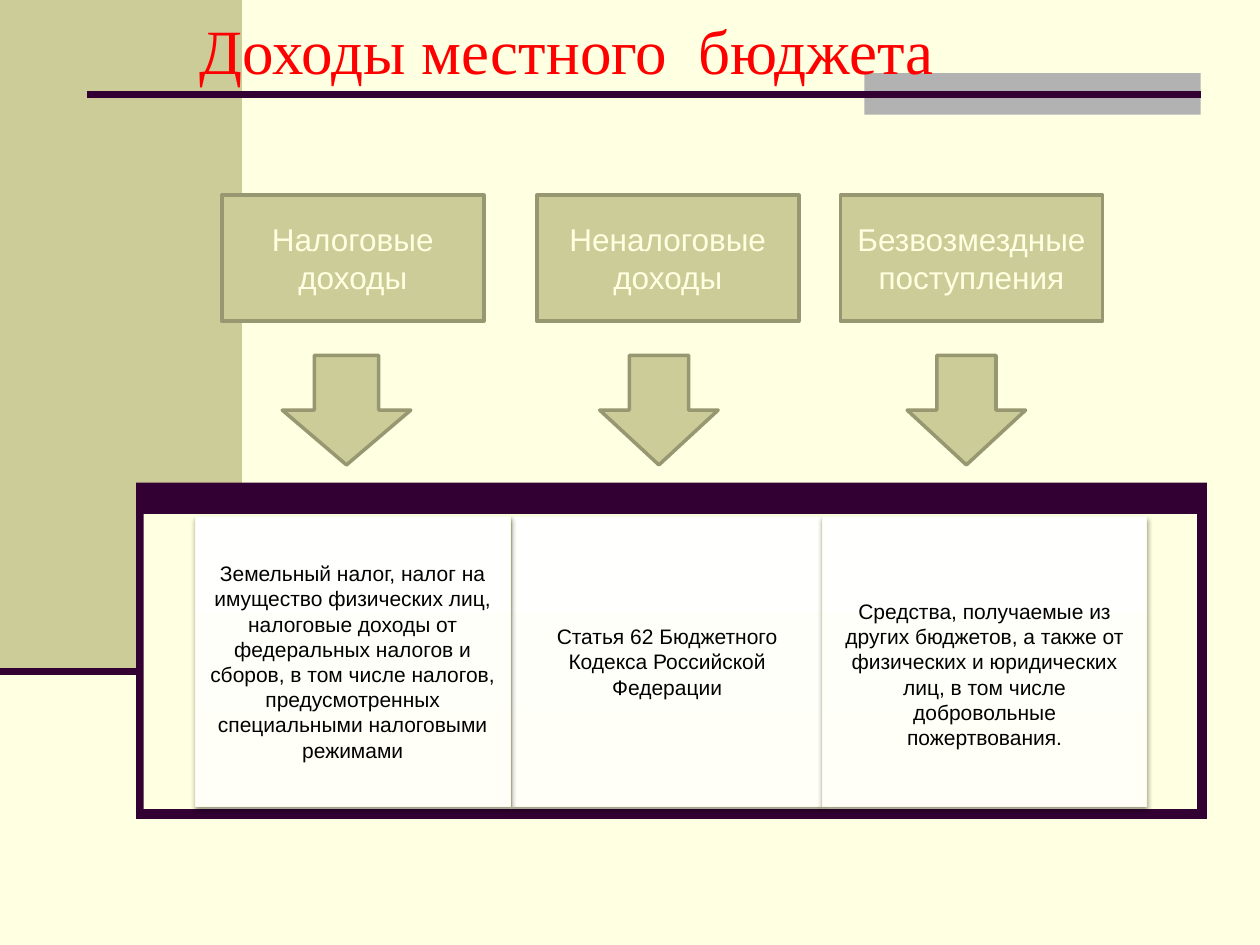
from lxml import etree
from pptx import Presentation
from pptx.dml.color import RGBColor
from pptx.enum import shapes, text
from pptx.oxml import parse_xml
from pptx.oxml.ns import nsdecls, qn
from pptx.util import Inches, Pt

CREAM = RGBColor(0xFF, 0xFF, 0xE1)
KHAKI = RGBColor(0xCC, 0xCC, 0x99)
OLIVE = RGBColor(0x97, 0x97, 0x71)
PLUM = RGBColor(0x33, 0x00, 0x33)
GRAY = RGBColor(0xB2, 0xB2, 0xB2)
RED = RGBColor(0xFF, 0x00, 0x00)
BLACK = RGBColor(0x00, 0x00, 0x00)
CARD_BOTTOM = RGBColor(0xFF, 0xFF, 0xF7)
CARD_TOP = RGBColor(0xFF, 0xFF, 0xFD)
CARD_EDGE = RGBColor(0xFA, 0xFA, 0xE8)

RECTANGLE = shapes.MSO_SHAPE.RECTANGLE
DOWN_ARROW = shapes.MSO_SHAPE.DOWN_ARROW

# Heading, its left edge, arrow left edge and width
CATEGORIES = [
    ("Налоговые доходы", 1.76, 2.24, 1.02),
    ("Неналоговые доходы", 4.26, 4.76, 0.94),
    ("Безвозмездные поступления", 6.67, 7.2, 0.94),
]
# Description, left edge, width, top inset; from back to front
CARDS = [
    ("Статья 62 Бюджетного Кодекса Российской Федерации", 4.07, 2.45, 0.05),
    ("Средства, получаемые из других бюджетов, а также от физических и "
     "юридических лиц, в том числе добровольные пожертвования.", 6.53, 2.57, 0.25),
    ("Земельный налог, налог на имущество физических лиц, налоговые доходы "
     "от федеральных налогов и сборов, в том числе налогов, предусмотренных "
     "специальными налоговыми режимами", 1.55, 2.5, 0.05),
]


def write(shape, words, size, color, font_name="Arial"):
    frame = shape.text_frame
    frame.word_wrap = True
    frame.vertical_anchor = text.MSO_ANCHOR.MIDDLE
    paragraph = frame.paragraphs[0]
    paragraph.text = words
    paragraph.alignment = text.PP_ALIGN.CENTER
    paragraph.font.name = font_name
    paragraph.font.size = Pt(size)
    paragraph.font.color.rgb = color


def add_block(slide, kind, left, top, width, height, fill, edge=None):
    """Add a solid preset shape, outlined only if an edge colour is given."""
    shape = slide.shapes.add_shape(
        kind, Inches(left), Inches(top), Inches(width), Inches(height))
    shape.shadow.inherit = False
    shape.fill.solid()
    shape.fill.fore_color.rgb = fill
    if edge is None:
        shape.line.fill.background()
    else:
        shape.line.color.rgb = edge
        shape.line.width = Pt(2)
    return shape


def add_rule(slide, left, right, y, weight):
    rule = slide.shapes.add_connector(
        shapes.MSO_CONNECTOR.STRAIGHT,
        Inches(left), Inches(y), Inches(right), Inches(y))
    rule.line.color.rgb = PLUM
    rule.line.width = Pt(weight)
    etree.SubElement(rule._element.spPr, qn("a:effectLst"))


def add_card(slide, words, left, width, top_inset):
    """Add a softly shaded and shadowed description card."""
    card = add_block(slide, RECTANGLE, left, 4.1, width, 2.3, CARD_TOP, CARD_EDGE)
    card.line.width = Pt(0.75)
    card.fill.gradient()
    card.fill.gradient_angle = 90
    for stop, color in zip(card.fill.gradient_stops, (CARD_BOTTOM, CARD_TOP)):
        stop.color.rgb = color
    card._element.spPr.find(qn("a:effectLst")).append(parse_xml(
        f'<a:outerShdw {nsdecls("a")} blurRad="40000" dist="20000" '
        'dir="5400000" rotWithShape="0"><a:srgbClr val="000000">'
        '<a:alpha val="38000"/></a:srgbClr></a:outerShdw>'))
    card.text_frame.margin_top = Inches(top_inset)
    write(card, words, 12, BLACK)


def add_backdrop(slide):
    slide.background.fill.solid()
    slide.background.fill.fore_color.rgb = CREAM
    add_block(slide, RECTANGLE, 0, 0, 1.92, 5.33, KHAKI)
    add_block(slide, RECTANGLE, 1.08, 3.83, 8.5, 2.67, PLUM)
    add_block(slide, RECTANGLE, 1.14, 4.08, 8.36, 2.34, CREAM)
    add_rule(slide, 0, 1.08, 5.33, 4)
    add_block(slide, RECTANGLE, 6.86, 0.58, 2.67, 0.33, GRAY)
    add_rule(slide, 0.69, 9.53, 0.75, 3.5)


def main():
    presentation = Presentation()
    presentation.slide_width = Inches(10)
    presentation.slide_height = Inches(7.5)
    slide = presentation.slides.add_slide(presentation.slide_layouts[6])

    add_backdrop(slide)
    title = slide.shapes.add_textbox(Inches(0.25), 0, Inches(8.5), Inches(0.78))
    write(title, "Доходы местного  бюджета", 36, RED, "Times New Roman")

    for card in CARDS:
        add_card(slide, *card)
    for heading, left, arrow_left, arrow_width in CATEGORIES:
        add_block(slide, DOWN_ARROW, arrow_left, 2.82, arrow_width, 0.87, KHAKI, OLIVE)
        box = add_block(slide, RECTANGLE, left, 1.55, 2.08, 1, KHAKI, OLIVE)
        write(box, heading, 18, CREAM)

    presentation.save("out.pptx")


if __name__ == "__main__":
    main()
